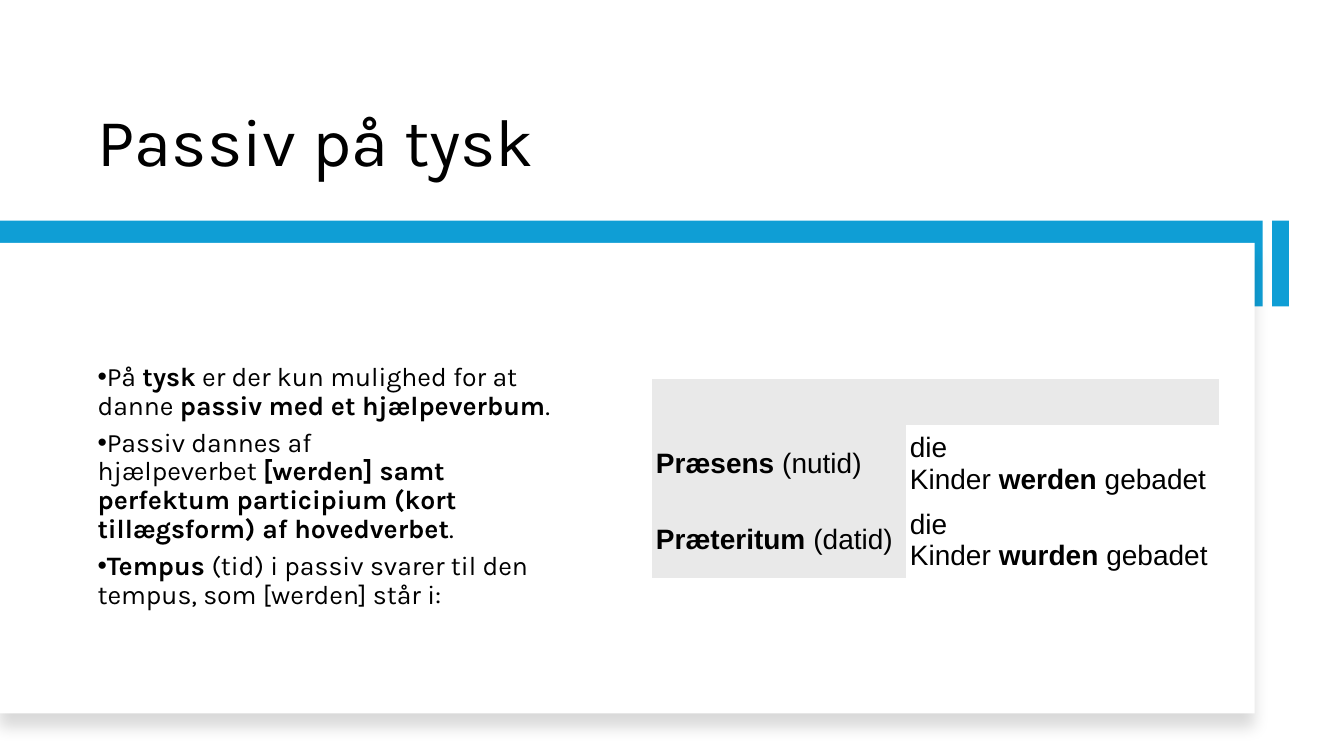
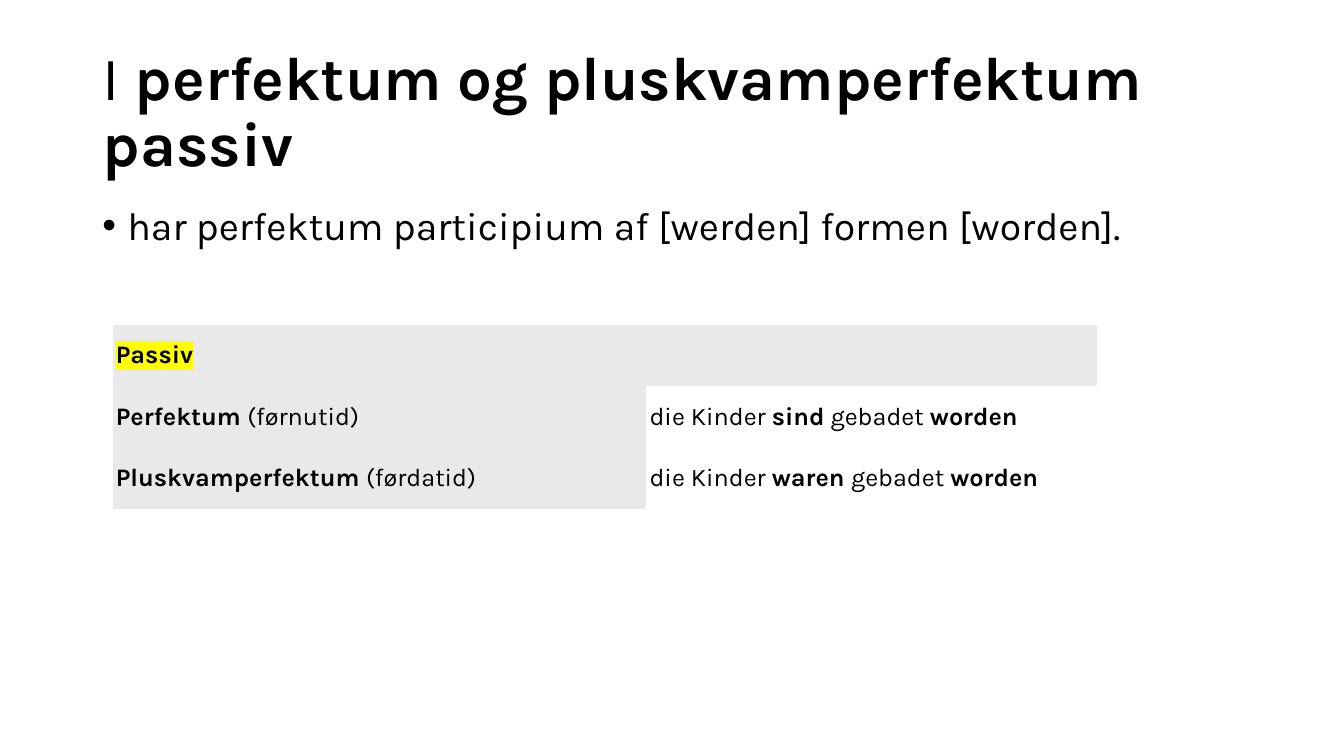
from dataclasses import dataclass

from lxml.etree import SubElement
from pptx import Presentation
from pptx.dml.color import RGBColor
from pptx.enum.shapes import MSO_SHAPE
from pptx.enum.text import MSO_ANCHOR as Anchor, MSO_AUTO_SIZE as AutoSize, PP_ALIGN as Align
from pptx.oxml import parse_xml
from pptx.oxml.ns import nsdecls, qn
from pptx.util import Cm, Pt


@dataclass(frozen=True)
class Theme:
    text: RGBColor = RGBColor(0, 0, 0)
    paper: RGBColor = RGBColor(255, 255, 255)
    accent: RGBColor = RGBColor(0x0F, 0x9E, 0xD5)
    label: RGBColor = RGBColor(0xE9, 0xE9, 0xE9)
    highlight: str = "FFFF00"
    font: str = "Karla"
    plain_font: str = "Arial"
    title: int = 48
    long_title: int = 44
    lead: int = 28
    table: int = 20
    bullets: int = 19
    small_table: int = 18
    line_spacing: float = 0.9


THEME = Theme()
NO_STYLE = "{2D5ABB26-0587-4C30-8999-92F81FD0307C}"
BOLD_MARK, HARD_SPACE_MARK = "*", "_"
HARD_SPACE = chr(160)


def write(p, marked, size, font=THEME.font):
    text = marked.replace(HARD_SPACE_MARK, HARD_SPACE)
    for i, part in enumerate(text.split(BOLD_MARK)):
        if part:
            r = p.add_run()
            r.text = part
            r.font.name = font
            r.font.size = Pt(size)
            r.font.bold = i % 2 == 1
            r.font.color.rgb = THEME.text


def place(sp, box):
    sp.left, sp.top, sp.width, sp.height = (Cm(v) for v in box)


def add_title(s, box, marked, size, anchor):
    sp = s.shapes.title
    place(sp, box)
    tf = sp.text_frame
    tf.auto_size = AutoSize.NONE
    tf.vertical_anchor = anchor
    p = tf.paragraphs[0]
    p.alignment = Align.LEFT
    p.line_spacing = THEME.line_spacing
    write(p, marked, size)


def add_bar(s, box, color):
    sp = s.shapes.add_shape(MSO_SHAPE.RECTANGLE, *(Cm(v) for v in box))
    sp.shadow.inherit = False
    sp.fill.solid()
    sp.fill.fore_color.rgb = color
    sp.line.fill.background()
    return sp


def add_panel(s, box):
    left, top, width, height = box
    depth = 2.16
    add_bar(s, (left, top, width + 0.2, depth), THEME.accent)
    panel = add_bar(s, (left, top + 0.56, width, height), THEME.paper)
    effects = panel._element.spPr.find(qn("a:effectLst"))
    effects.append(parse_xml(
        f'<a:outerShdw {nsdecls("a")} blurRad="{Pt(11)}" dist="{Pt(10)}" dir="5400000" '
        'algn="t" rotWithShape="0"><a:srgbClr val="000000"><a:alpha val="15000"/>'
        '</a:srgbClr></a:outerShdw>'))
    add_bar(s, (left + width + 0.44, top, 0.42, depth), THEME.accent)


def add_bullets(s, box, items, size, anchor, indent=0.0, gap=0):
    sp = s.shapes.add_textbox(*(Cm(v) for v in box))
    tf = sp.text_frame
    tf.word_wrap = True
    tf.vertical_anchor = anchor
    for i, item in enumerate(items):
        p = tf.add_paragraph() if i else tf.paragraphs[0]
        p.line_spacing = THEME.line_spacing
        p.space_after = Pt(gap)
        pPr = p._p.get_or_add_pPr()
        pPr.set("marL", str(Cm(indent)))
        pPr.set("indent", str(-Cm(indent)))
        SubElement(pPr, qn("a:buFont"), typeface=THEME.plain_font)
        SubElement(pPr, qn("a:buChar"), char="•")
        write(p, item, size)


def add_tense_table(s, origin, widths, heights, heading, rows, size, font, inset):
    left, top = origin
    frame = s.shapes.add_table(len(heights), len(widths), Cm(left), Cm(top),
                               Cm(sum(widths)), Cm(sum(heights)))
    table = frame.table
    table.first_row = table.horz_banding = False
    table._tbl.tblPr.find(qn("a:tableStyleId")).text = NO_STYLE
    for col, width in zip(table.columns, widths):
        col.width = Cm(width)
    for row, height in zip(table.rows, heights):
        row.height = Cm(height)
    table.cell(0, 0).merge(table.cell(0, 1))
    for y, texts in enumerate([(heading, ""), *rows]):
        for x, marked in enumerate(texts):
            cell = table.cell(y, x)
            cell.fill.solid()
            cell.fill.fore_color.rgb = THEME.label if x == 0 or y == 0 else THEME.paper
            cell.vertical_anchor = Anchor.MIDDLE
            cell.margin_left = cell.margin_right = Cm(inset)
            cell.margin_top = cell.margin_bottom = Cm(inset)
            write(cell.text_frame.paragraphs[0], marked, size, font)
    return table


def highlight(r):
    mark = parse_xml(f'<a:highlight {nsdecls("a")}><a:srgbClr val="{THEME.highlight}"/></a:highlight>')
    r._r.rPr.find(qn("a:solidFill")).addnext(mark)


def build_passive(s):
    add_title(s, (2.21, 1.07, 27.97, 3.61), "Passiv på tysk", THEME.title, Anchor.BOTTOM)
    add_panel(s, (0, 5.56, 31.62, 11.86))
    add_bullets(s, (2.21, 7.21, 12.6, 10.11), [
        "På_*tysk*_er der kun mulighed for at danne_*passiv med et hjælpeverbum*.",
        "Passiv dannes af hjælpeverbet_*[werden] samt perfektum participium "
        "(kort tillægsform) af hovedverbet*.",
        "*Tempus_*(tid) i passiv svarer til den tempus, som [werden] står i:",
    ], THEME.bullets, Anchor.MIDDLE, gap=6)
    add_tense_table(s, (16.43, 9.55), (6.4, 7.89), (1.17, 1.93, 1.92), "", [
        ("*Præsens*_(nutid)", "die Kinder_*werden*_gebadet"),
        ("*Præteritum_*(datid)", "die Kinder_*wurden_*gebadet"),
    ], THEME.table, THEME.plain_font, 0.1)


def build_perfect(s):
    add_title(s, (2.34, 1.02, 29.21, 3.68), "I_*perfektum og pluskvamperfektum passiv*",
              THEME.long_title, Anchor.MIDDLE)
    add_bullets(s, (2.33, 5.08, 29.21, 12.09),
                ["har perfektum participium af [werden] formen [worden]."],
                THEME.lead, Anchor.TOP, indent=0.63)
    table = add_tense_table(s, (2.84, 8.18), (13.45, 11.35), (1.55,) * 3, "*Passiv*", [
        ("*Perfektum_*(førnutid)", "die Kinder_*sind*_gebadet_*worden*"),
        ("*Pluskvamperfektum_*(førdatid)", "die Kinder_*waren_*gebadet_*worden*"),
    ], THEME.small_table, THEME.font, 0.08)
    highlight(table.cell(0, 0).text_frame.paragraphs[0].runs[0])


def main():
    prs = Presentation()
    prs.slide_width, prs.slide_height = Cm(33.87), Cm(19.05)
    for build in (build_passive, build_perfect):
        build(prs.slides.add_slide(prs.slide_layouts[5]))
    prs.save("out.pptx")


if __name__ == "__main__":
    main()
